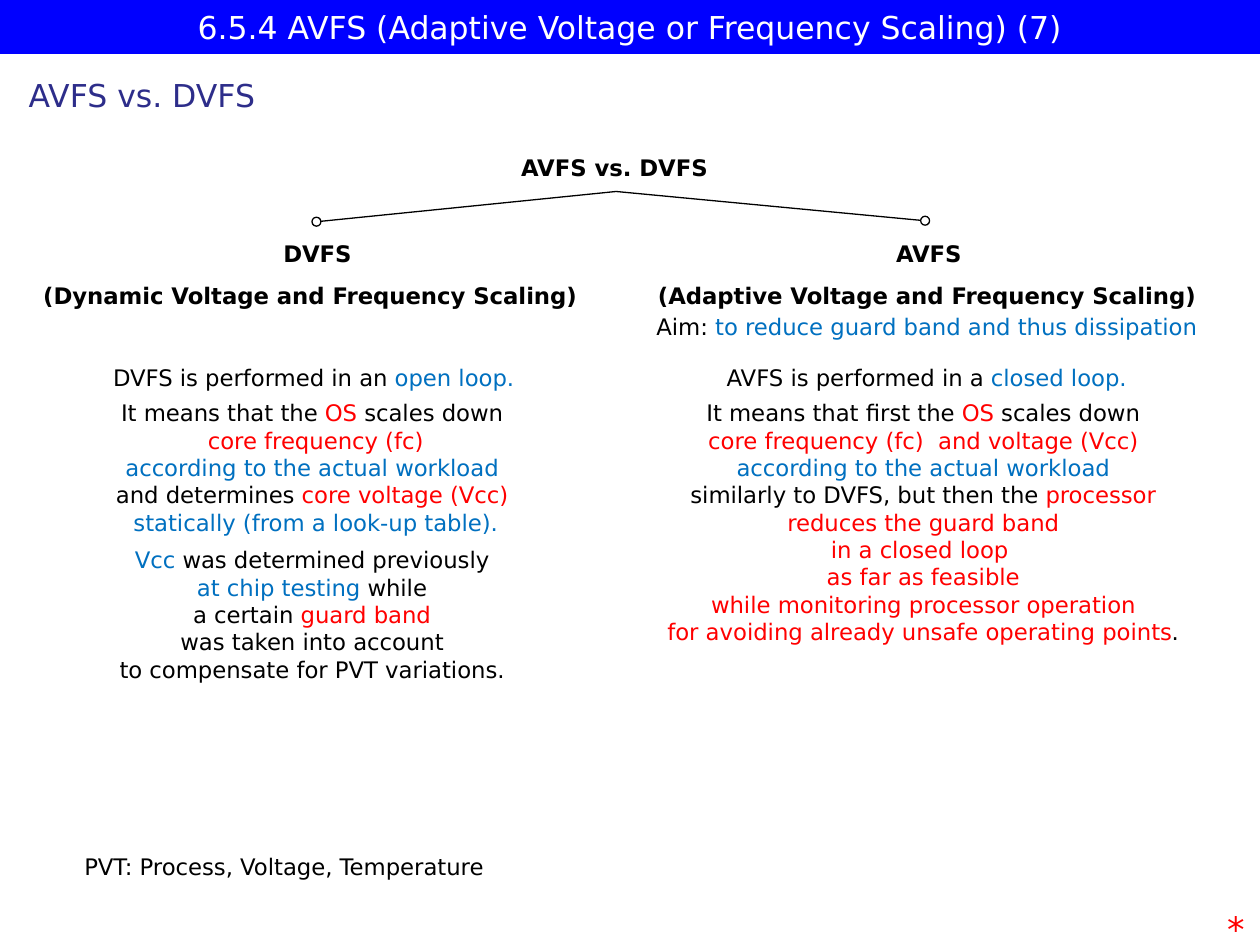
from lxml import etree
from pptx import Presentation
from pptx.dml.color import RGBColor
from pptx.enum.shapes import MSO_CONNECTOR, MSO_SHAPE
from pptx.enum.text import MSO_ANCHOR, MSO_AUTO_SIZE, PP_ALIGN
from pptx.oxml.ns import qn
from pptx.util import Cm, Pt

LEFT, CENTER = PP_ALIGN.LEFT, PP_ALIGN.CENTER
MIDDLE = MSO_ANCHOR.MIDDLE
GROW = MSO_AUTO_SIZE.SHAPE_TO_FIT_TEXT
STRAIGHT = MSO_CONNECTOR.STRAIGHT
RECTANGLE, OVAL = MSO_SHAPE.RECTANGLE, MSO_SHAPE.OVAL

FONT = "DejaVu Sans"
BODY_SIZE = 13
LINE_HEIGHT = 0.81
COLORS = {
    "black": "000000",
    "white": "FFFFFF",
    "red": "FF0000",
    "blue": "0070C0",
    "bar": "0000FF",
    "topic": "2D2D8A",
}

# Each paragraph is a list of (text, color) runs
DVFS_DETAILS = [
    [("It means that the ", "black"), ("OS ", "red"), ("scales down", "black")],
    [(" ", "black"), ("core frequency (fc)", "red")],
    [("according to the actual workload", "blue")],
    [("and determines ", "black"), ("core voltage (Vcc)", "red")],
    [(" ", "black"), ("statically (from a look-up table).", "blue")],
    [("Vcc ", "blue"), ("was determined previously", "black")],
    [("at chip testing ", "blue"), ("while", "black")],
    [("a certain ", "black"), ("guard band", "red")],
    [("was taken into account", "black")],
    [("to compensate for PVT variations.", "black")],
]
AVFS_DETAILS = [
    [("It means that first the ", "black"), ("OS", "red"), (" scales down", "black")],
    [("core frequency (fc)  and voltage (Vcc)", "red")],
    [("according to the actual workload", "blue")],
    [("similarly to DVFS, but then the ", "black"), ("processor", "red")],
    [("reduces the guard band", "red")],
    [("in a closed loop ", "red")],
    [("as far as feasible", "red")],
    [("while monitoring processor operation", "red")],
    [("for avoiding already unsafe operating points", "red"), (".", "black")],
]


def color(name):
    return RGBColor.from_string(COLORS[name])


def write_paragraphs(text_frame, paragraphs, size, align, bold=False):
    for index, runs in enumerate(paragraphs):
        paragraph = text_frame.paragraphs[0] if index == 0 else text_frame.add_paragraph()
        paragraph.alignment = align
        for text, color_name in runs:
            run = paragraph.add_run()
            run.text = text
            run.font.name = FONT
            run.font.size = Pt(size)
            run.font.bold = bold
            run.font.color.rgb = color(color_name)


def add_text(slide, left, top, width, height, paragraphs,
             size=BODY_SIZE, align=LEFT, bold=False, wrap=False):
    box = slide.shapes.add_textbox(Cm(left), Cm(top), Cm(width), Cm(height))
    text_frame = box.text_frame
    text_frame.word_wrap = wrap
    text_frame.auto_size = GROW
    write_paragraphs(text_frame, paragraphs, size, align, bold)
    return text_frame


def add_heading(slide, left, top, width, text, wrap=False):
    return add_text(slide, left, top, width, LINE_HEIGHT, [[(text, "black")]],
                    align=CENTER, bold=True, wrap=wrap)


def add_filled_shape(slide, kind, left, top, width, height, fill):
    shape = slide.shapes.add_shape(kind, Cm(left), Cm(top), Cm(width), Cm(height))
    shape.shadow.inherit = False
    shape.fill.solid()
    shape.fill.fore_color.rgb = color(fill)
    return shape


def add_title_bar(slide, text):
    bar = add_filled_shape(slide, RECTANGLE, 0, 0, 25.4, 1.09, "bar")
    bar.line.fill.background()
    bar.text_frame.vertical_anchor = MIDDLE
    write_paragraphs(bar.text_frame, [[(text, "white")]], 18, CENTER)


def add_branch(slide, start, end):
    line = slide.shapes.add_connector(STRAIGHT, *(Cm(value) for value in start + end))
    line.line.color.rgb = color("black")
    line.line.width = Pt(0.75)
    etree.SubElement(line._element.spPr, qn("a:effectLst"))


def add_node(slide, center, diameter=0.18):
    x, y = center
    node = add_filled_shape(slide, OVAL, x - diameter / 2, y - diameter / 2,
                            diameter, diameter, "white")
    node.line.color.rgb = color("black")
    node.line.width = Pt(0)


def main():
    presentation = Presentation()
    presentation.slide_width, presentation.slide_height = Cm(25.4), Cm(19.05)
    slide = presentation.slides.add_slide(presentation.slide_layouts[6])

    # Title bar and topic
    add_title_bar(slide, "6.5.4 AVFS (Adaptive Voltage or Frequency Scaling) (7)")
    add_text(slide, 0.33, 1.4, 5.31, 1.02, [[("AVFS vs. DVFS", "topic")]], size=18)

    # Tree from the common heading to the two techniques
    add_heading(slide, 10.24, 2.97, 4.29, "AVFS vs. DVFS")
    branch_ends = [(6.38, 4.47), (18.65, 4.45)]
    for end in branch_ends:
        add_branch(slide, (12.42, 3.86), end)
    for end in branch_ends:
        add_node(slide, end)

    # DVFS column
    add_heading(slide, 1.4, 4.7, 10, "DVFS", wrap=True)
    add_heading(slide, 0.53, 5.56, 11.43, "(Dynamic Voltage and Frequency Scaling)")
    add_text(slide, 2.03, 7.21, 8.81, LINE_HEIGHT,
             [[("DVFS is performed in an ", "black"), ("open loop.", "blue")]])
    details = add_text(slide, 2.01, 7.92, 8.56, 6.02, DVFS_DETAILS, align=CENTER)
    details.paragraphs[4].space_after = Pt(6)

    # AVFS column
    add_heading(slide, 17.58, 4.7, 2.29, "AVFS", wrap=True)
    aim = [("Aim: ", "black"), ("to reduce guard band and thus dissipation", "blue")]
    full_name = add_text(slide, 12.85, 5.56, 11.66, 1.45,
                         [[("(Adaptive Voltage and Frequency Scaling)", "black")], aim],
                         align=CENTER)
    full_name.paragraphs[0].runs[0].font.bold = True
    full_name.paragraphs[0].space_after = Pt(2)
    add_text(slide, 14.4, 7.21, 8.79, LINE_HEIGHT,
             [[("AVFS is performed in a ", "black"), ("closed loop.", "blue")]])
    add_text(slide, 13.11, 7.92, 11, 5.26, AVFS_DETAILS, align=CENTER)

    # Footnote and end mark
    add_text(slide, 1.45, 17.07, 8.81, LINE_HEIGHT,
             [[("PVT: Process, Voltage, Temperature", "black")]])
    add_text(slide, 24.49, 18.16, 0.97, 1.12, [[("*", "red")]], size=20)

    presentation.save("out.pptx")


if __name__ == "__main__":
    main()
